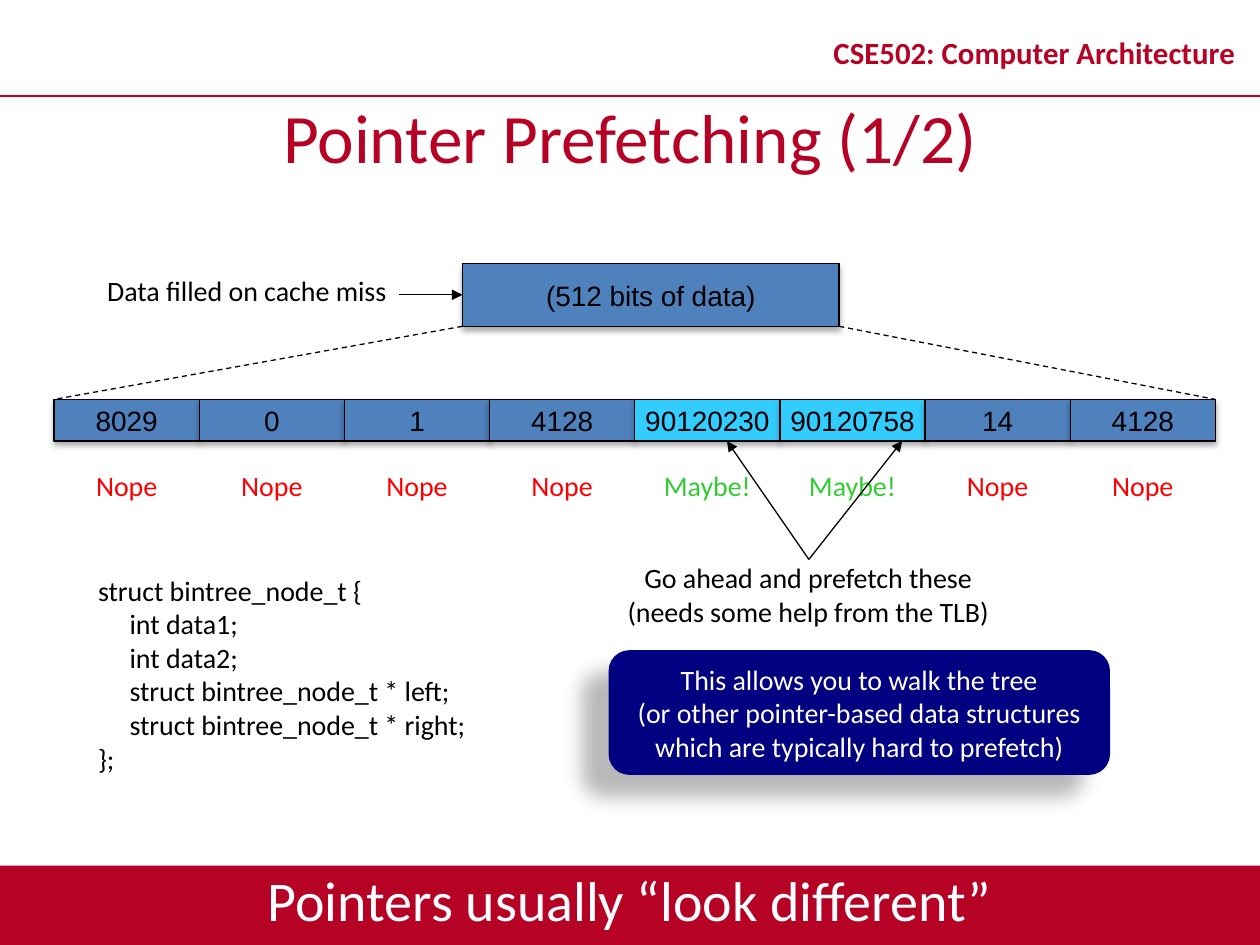
from lxml import etree
from pptx import Presentation
from pptx.dml.color import RGBColor
from pptx.enum.dml import MSO_LINE
from pptx.enum.shapes import MSO_CONNECTOR, MSO_SHAPE
from pptx.enum.text import MSO_ANCHOR, MSO_AUTO_SIZE, PP_ALIGN
from pptx.oxml.ns import qn
from pptx.util import Inches, Pt

RECTANGLE, ROUNDED = MSO_SHAPE.RECTANGLE, MSO_SHAPE.ROUNDED_RECTANGLE
STRAIGHT, DASH = MSO_CONNECTOR.STRAIGHT, MSO_LINE.DASH
LEFT, CENTER = PP_ALIGN.LEFT, PP_ALIGN.CENTER
TOP, MIDDLE = MSO_ANCHOR.TOP, MSO_ANCHOR.MIDDLE
NO_AUTOFIT = MSO_AUTO_SIZE.NONE

CRIMSON = RGBColor(0xB6, 0x02, 0x25)
BLUE = RGBColor(0x4F, 0x81, 0xBD)
CYAN = RGBColor(0x33, 0xCC, 0xFF)
NAVY = RGBColor(0x00, 0x00, 0x80)
RED = RGBColor(0xFF, 0x00, 0x00)
GREEN = RGBColor(0x33, 0xCC, 0x33)
BLACK = RGBColor(0x00, 0x00, 0x00)
WHITE = RGBColor(0xFF, 0xFF, 0xFF)

WIDTH, HEIGHT = 10, 7.5
ROW_LEFT, ROW_TOP, CELL_WIDTH, CELL_HEIGHT = 0.43, 3.17, 1.152, 0.33
LABEL_TOP, LABEL_HEIGHT = 3.67, 0.37
BLOCK_LEFT, BLOCK_TOP, BLOCK_WIDTH, BLOCK_HEIGHT = 3.67, 2.09, 2.99, 0.5
WORDS = ["8029", "0", "1", "4128", "90120230", "90120758", "14", "4128"]
POINTER_COLUMNS = (4, 5)
BLOCK_SHADOW = (32, 3.5, 2.2, 90)
BAR_SHADOW = (35, 3.1, 1.8, 90)
CARD_SHADOW = (28, 11.8, 19.7, 141)

CODE = [
    "struct bintree_node_t {",
    "     int data1;",
    "     int data2;",
    "     struct bintree_node_t * left;",
    "     struct bintree_node_t * right;",
    "};",
]


def write_lines(frame, lines, color=BLACK, size=16, font="Calibri", bold=False,
                align=CENTER, anchor=TOP, wrap=False, spacing=None):
    """Write one formatted paragraph for each line."""
    frame.word_wrap = wrap
    frame.auto_size = NO_AUTOFIT
    frame.vertical_anchor = anchor
    for index, line in enumerate(lines):
        paragraph = frame.paragraphs[0] if index == 0 else frame.add_paragraph()
        paragraph.alignment = align
        if spacing:
            paragraph.line_spacing = spacing
        run = paragraph.add_run()
        run.text = line
        run.font.name = font
        run.font.size = Pt(size)
        run.font.bold = bold
        run.font.color.rgb = color


def add_text(slide, box, lines, **style):
    """Add a text box at box (left, top, width, height)."""
    shape = slide.shapes.add_textbox(*map(Inches, box))
    write_lines(shape.text_frame, lines, **style)


def add_shadow(shape, opacity, blur, distance, angle):
    """Give a shape a black outer shadow."""
    shape.shadow.inherit = False
    effects = shape._element.spPr.find(qn("a:effectLst"))
    outer = etree.SubElement(effects, qn("a:outerShdw"), blurRad=str(Pt(blur)),
                             dist=str(Pt(distance)), dir=str(angle * 60000),
                             algn="ctr", rotWithShape="0")
    color = etree.SubElement(outer, qn("a:srgbClr"), val=str(BLACK))
    etree.SubElement(color, qn("a:alpha"), val=str(opacity * 1000))


def add_panel(slide, box, fill, shadow, kind=RECTANGLE, outline=None):
    """Add a filled, shadowed shape and return it."""
    shape = slide.shapes.add_shape(kind, *map(Inches, box))
    shape.fill.solid()
    shape.fill.fore_color.rgb = fill
    if outline is None:
        shape.line.fill.background()
    else:
        shape.line.color.rgb = outline
        shape.line.width = Pt(0.75)
    add_shadow(shape, *shadow)
    return shape


def add_data_block(slide, box, text, fill=BLUE, side_inset=0.0):
    """Add an outlined block holding a data value."""
    shape = add_panel(slide, box, fill, BLOCK_SHADOW, outline=BLACK)
    frame = shape.text_frame
    frame.margin_left = frame.margin_right = Inches(side_inset)
    write_lines(frame, [text], font="Arial", anchor=MIDDLE)


def add_line(slide, start, end, color=BLACK, width=0.75, dash=None, arrow=False):
    """Add a straight line, optionally dashed or with an arrowhead at its end."""
    line = slide.shapes.add_connector(STRAIGHT, *map(Inches, (*start, *end)))
    line.line.color.rgb = color
    line.line.width = Pt(width)
    if dash:
        line.line.dash_style = dash
    if arrow:
        etree.SubElement(line.line._get_or_add_ln(), qn("a:tailEnd"), type="triangle")
    etree.SubElement(line._element.spPr, qn("a:effectLst"))


def add_frame(slide):
    """Add the course header, the title and the bottom banner."""
    add_panel(slide, (0, 6.87, WIDTH, 0.63), CRIMSON, BAR_SHADOW)
    add_line(slide, (0, 0.76), (WIDTH, 0.76), CRIMSON, 1)
    add_text(slide, (6.42, 0.13, 3.58, 0.63), ["CSE502: Computer Architecture"],
             color=CRIMSON, size=17.6, bold=True, anchor=MIDDLE, wrap=True, spacing=0.8)
    title = slide.shapes.title
    title.left, title.top, title.width, title.height = map(Inches, (0, 0.76, WIDTH, 0.63))
    write_lines(title.text_frame, ["Pointer Prefetching (1/2)"], color=CRIMSON,
                size=39.6, anchor=MIDDLE, wrap=True)
    add_text(slide, (0, 6.82, WIDTH, 0.63), ["Pointers usually “look different”"],
             color=WHITE, size=32, wrap=True)


def add_cache_line(slide):
    """Add the cache block and the row of words it expands into."""
    middle = BLOCK_TOP + BLOCK_HEIGHT / 2
    bottom = BLOCK_TOP + BLOCK_HEIGHT
    add_text(slide, (0.73, 2.12, 2.46, 0.37), ["Data filled on cache miss"])
    add_data_block(slide, (BLOCK_LEFT, BLOCK_TOP, BLOCK_WIDTH, BLOCK_HEIGHT),
                   "(512 bits of data)", side_inset=0.1)
    add_line(slide, (BLOCK_LEFT - 0.5, middle), (BLOCK_LEFT, middle), arrow=True)
    for column, word in enumerate(WORDS):
        left = ROW_LEFT + column * CELL_WIDTH
        is_pointer = column in POINTER_COLUMNS
        add_data_block(slide, (left, ROW_TOP, CELL_WIDTH, CELL_HEIGHT), word,
                       CYAN if is_pointer else BLUE)
        add_text(slide, (left, LABEL_TOP, CELL_WIDTH, LABEL_HEIGHT),
                 ["Maybe!" if is_pointer else "Nope"],
                 color=GREEN if is_pointer else RED, wrap=True)
    row_right = ROW_LEFT + len(WORDS) * CELL_WIDTH
    add_line(slide, (BLOCK_LEFT, bottom), (ROW_LEFT, ROW_TOP), dash=DASH)
    add_line(slide, (BLOCK_LEFT + BLOCK_WIDTH, bottom), (row_right, ROW_TOP), dash=DASH)


def add_explanation(slide):
    """Add the code, the prefetch note with its arrows and the conclusion card."""
    add_text(slide, (0.68, 4.5, 3.24, 1.72), CODE, align=LEFT)
    add_text(slide, (4.85, 4.4, 3.13, 0.64),
             ["Go ahead and prefetch these", "(needs some help from the TLB)"])
    for target in (5.77, 7.16):
        add_line(slide, (6.42, 4.44), (target, ROW_TOP + CELL_HEIGHT), arrow=True)
    card = add_panel(slide, (4.83, 5.16, 3.98, 0.99), NAVY, CARD_SHADOW, ROUNDED)
    write_lines(card.text_frame,
                ["This allows you to walk the tree",
                 "(or other pointer-based data structures",
                 "which are typically hard to prefetch)"], color=WHITE, anchor=MIDDLE)


def main():
    """Build the slide and save it."""
    presentation = Presentation()
    presentation.slide_width, presentation.slide_height = Inches(WIDTH), Inches(HEIGHT)
    slide = presentation.slides.add_slide(presentation.slide_layouts[5])
    add_frame(slide)
    add_cache_line(slide)
    add_explanation(slide)
    presentation.save("out.pptx")


if __name__ == "__main__":
    main()
